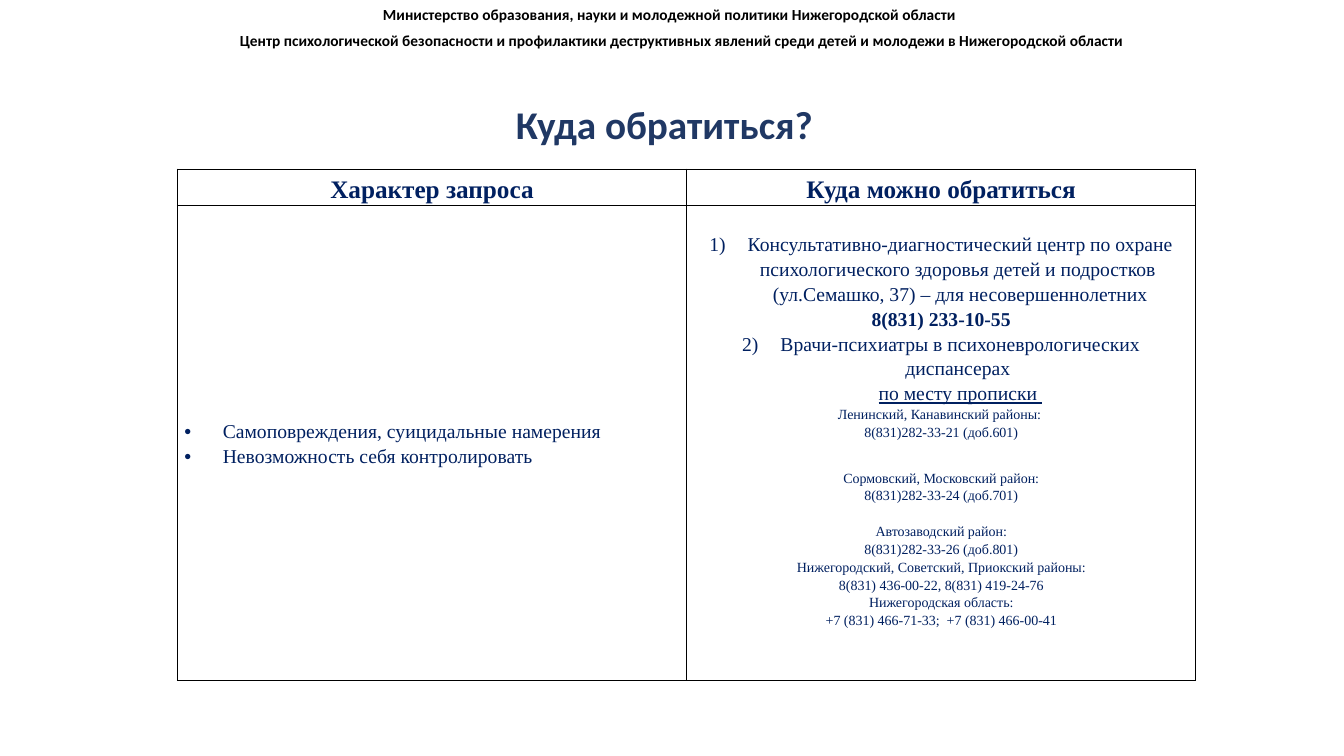
"""Build the slide that tells where to turn for help."""
from lxml.etree import SubElement
from pptx import Presentation
from pptx.dml.color import RGBColor
from pptx.enum.text import MSO_ANCHOR, MSO_AUTO_SIZE, PP_ALIGN
from pptx.oxml.ns import qn
from pptx.util import Inches, Pt


def style(par, size, color, bold=False, face="Times New Roman"):
    for run in par.runs:
        font = run.font
        font.name, font.size, font.bold = face, Pt(size), bold
        font.color.rgb = RGBColor.from_string(color)
    for brk in par._p.findall(qn("a:br")):
        SubElement(brk, qn("a:rPr"), sz=str(size * 100))


def bullet(par, tag, **attrs):
    props = par._p.get_or_add_pPr()
    props.set("marL", str(Inches(0.38)))
    props.set("indent", str(-Inches(0.38)))
    if tag == "a:buChar":
        SubElement(props, qn("a:buFont"), typeface="Arial")
    SubElement(props, qn(tag), **attrs)


NAVY = "002060"
deck = Presentation()
deck.slide_width, deck.slide_height = Inches(13.33), Inches(7.5)
slide = deck.slides.add_slide(deck.slide_layouts[5])

title = slide.shapes.title
title.left, title.top = Inches(5), Inches(0.94)
title.width, title.height = Inches(3.18), Inches(0.57)
frame = title.text_frame
frame.text = "Куда обратиться?"
frame.word_wrap = False
frame.auto_size = MSO_AUTO_SIZE.SHAPE_TO_FIT_TEXT
frame.vertical_anchor = MSO_ANCHOR.TOP
frame.paragraphs[0].alignment = PP_ALIGN.CENTER
style(frame.paragraphs[0], 28, "203864", True, "Calibri")

heads = [
    (3.7, 0, 8.32, "Министерство образования, науки и молодежной политики Нижегородской области"),
    (2.28, 0.26, 9.78, "Центр психологической безопасности и профилактики деструктивных явлений "
                       "среди детей и молодежи в Нижегородской области"),
]
for left, top, width, text in heads:
    box = slide.shapes.add_textbox(Inches(left), Inches(top), Inches(width), Inches(0.29))
    frame = box.text_frame
    frame.text = text
    frame.word_wrap = True
    frame.auto_size = MSO_AUTO_SIZE.SHAPE_TO_FIT_TEXT
    style(frame.paragraphs[0], 11, "000000", True, "Calibri")

table = slide.shapes.add_table(2, 2, Inches(1.76), Inches(1.68), Inches(10.1), Inches(5.07)).table
table.first_row = table.horz_banding = False
table.rows[0].height, table.rows[1].height = Inches(0.36), Inches(4.71)
for cell in table.iter_cells():
    cell.margin_left = cell.margin_right = Inches(0.07)
    cell.margin_top = cell.margin_bottom = 0
    cell.vertical_anchor = MSO_ANCHOR.MIDDLE
    props = cell._tc.get_or_add_tcPr()
    for side in ("a:lnL", "a:lnR", "a:lnT", "a:lnB"):
        line = SubElement(props, qn(side), w=str(Pt(1)))
        fill = SubElement(line, qn("a:solidFill"))
        SubElement(fill, qn("a:srgbClr"), val="000000")
    cell.fill.background()

for col, text in enumerate(["Характер запроса", "Куда можно обратиться"]):
    cell = table.cell(0, col)
    cell.text = text
    par = cell.text_frame.paragraphs[0]
    par.alignment, par.line_spacing = PP_ALIGN.CENTER, 1.15
    style(par, 18, NAVY, True)

needs = table.cell(1, 0)
needs.text = "Самоповреждения, суицидальные намерения\nНевозможность себя контролировать"
for par in needs.text_frame.paragraphs:
    par.line_spacing = 1.15
    bullet(par, "a:buChar", char="•")
    style(par, 14, NAVY)

places = [
    ("Консультативно-диагностический центр по охране психологического здоровья детей "
     "и подростков \n(ул.Семашко, 37) – для несовершеннолетних", 14, 0),
    ("8(831) 233-10-55", 14, 0),
    ("Врачи-психиатры в психоневрологических диспансерах \nпо месту прописки ", 14, 0),
    ("Ленинский, Канавинский районы: \n8(831)282-33-21 (доб.601)", 10, 0),
    ("Сормовский, Московский район:\n8(831)282-33-24 (доб.701)", 10, 20),
    ("Автозаводский район:\n8(831)282-33-26 (доб.801)", 10, 13),
    ("Нижегородский, Советский, Приокский районы:", 10, 0),
    ("8(831) 436-00-22, 8(831) 419-24-76", 10, 0),
    ("Нижегородская область:", 10, 0),
    ("+7 (831) 466-71-33;  +7 (831) 466-00-41", 10, 0),
]
cell = table.cell(1, 1)
cell.vertical_anchor = MSO_ANCHOR.TOP
cell.margin_top = Inches(0.25)
frame = cell.text_frame
for spot, (text, size, gap) in enumerate(places):
    par = frame.add_paragraph() if spot else frame.paragraphs[0]
    par.text = text
    par.alignment, par.line_spacing = PP_ALIGN.CENTER, 1.15
    if gap:
        par.space_before = Pt(gap)
    style(par, size, NAVY, spot == 1)
for num, spot in enumerate((0, 2), 1):
    bullet(frame.paragraphs[spot], "a:buAutoNum", type="arabicParenR", startAt=str(num))
frame.paragraphs[2].runs[-1].font.underline = True

deck.save("out.pptx")
